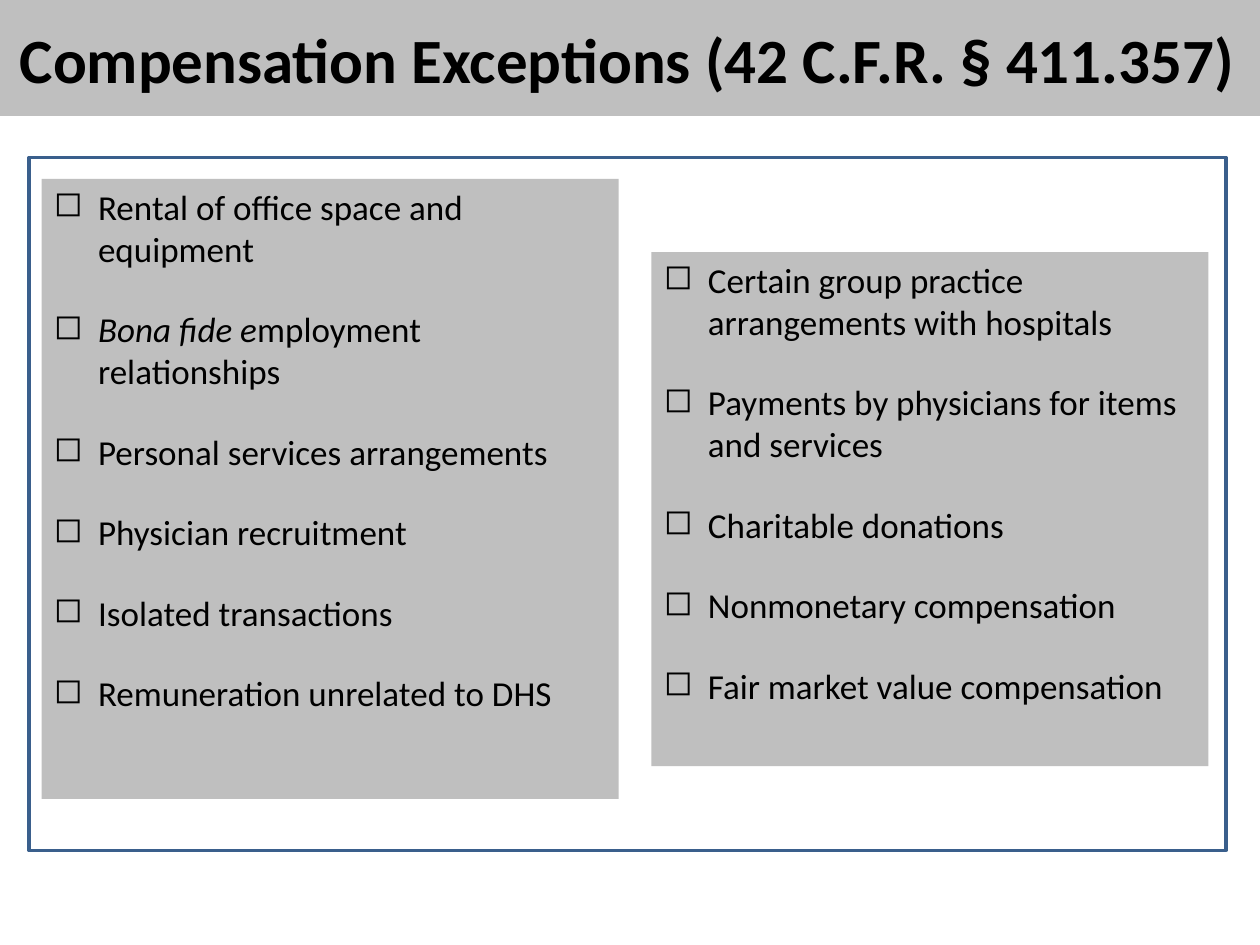
from lxml.etree import SubElement as Sub
from pptx import Presentation
from pptx.dml.color import RGBColor as RGB
from pptx.enum.shapes import MSO_SHAPE as Shape
from pptx.enum.text import MSO_ANCHOR as Anchor, PP_ALIGN as Align
from pptx.oxml.ns import qn
from pptx.util import Inches, Pt

GREY, BLACK, BLUE = "BFBFBF", "000000", "3A5F8C"

LEFT = [
    "Rental of office space and equipment",
    [("Bona fide e", True), ("mployment relationships", False)],
    "Personal services arrangements",
    "Physician recruitment",
    "Isolated transactions",
    "Remuneration unrelated to DHS",
]
RIGHT = [
    "Certain group practice arrangements with hospitals",
    "Payments by physicians for items and services",
    "Charitable donations",
    "Nonmonetary compensation",
    "Fair market value compensation",
]


def color(code):
    return RGB.from_string(code)


def panel(slide, x, y, w, h, anchor=Anchor.TOP):
    """Grey text box; returns its text frame."""
    box = slide.shapes.add_textbox(Inches(x), Inches(y), Inches(w), Inches(h))
    box.fill.solid()
    box.fill.fore_color.rgb = color(GREY)
    frame = box.text_frame
    frame.word_wrap = True
    frame.vertical_anchor = anchor
    return frame


def write(para, text, size=20, bold=False, align=Align.LEFT):
    """Fill a paragraph from a string or a list of (text, italic) parts."""
    para.alignment = align
    parts = [(text, False)] if isinstance(text, str) else text
    for part, italic in parts:
        run = para.add_run()
        run.text = part
        font = run.font
        font.name, font.size = "Calibri", Pt(size)
        font.bold, font.italic = bold, italic
        font.color.rgb = color(BLACK)


def bullet(para, mark="◻", indent=0.35):
    para.space_before, para.space_after = Pt(4), Pt(18)
    props = para._p.get_or_add_pPr()
    props.set("marL", str(Inches(indent)))
    props.set("indent", str(-Inches(indent)))
    Sub(props, qn("a:buChar")).set("char", mark)


def listing(slide, items, x, y, w, h):
    frame = panel(slide, x, y, w, h)
    for i, item in enumerate(items):
        para = frame.add_paragraph() if i else frame.paragraphs[0]
        write(para, item)
        bullet(para)


def border(slide, x, y, w, h):
    rect = slide.shapes.add_shape(
        Shape.RECTANGLE, Inches(x), Inches(y), Inches(w), Inches(h))
    rect.shadow.inherit = False
    rect.fill.background()
    rect.line.color.rgb = color(BLUE)
    rect.line.width = Pt(2)


def main():
    deck = Presentation()
    deck.slide_width, deck.slide_height = Inches(10), Inches(7.5)
    slide = deck.slides.add_slide(deck.slide_layouts[6])

    # Title band
    title = panel(slide, -0.04, 0, 10.04, 0.92, Anchor.MIDDLE)
    write(title.paragraphs[0], "Compensation Exceptions (42 C.F.R. § 411.357)",
          size=36, bold=True, align=Align.CENTER)

    # Two lists inside one border
    listing(slide, LEFT, 0.33, 1.42, 4.58, 4.92)
    listing(slide, RIGHT, 5.17, 2, 4.42, 4.08)
    border(slide, 0.23, 1.25, 9.5, 5.5)

    deck.save("out.pptx")


if __name__ == "__main__":
    main()
